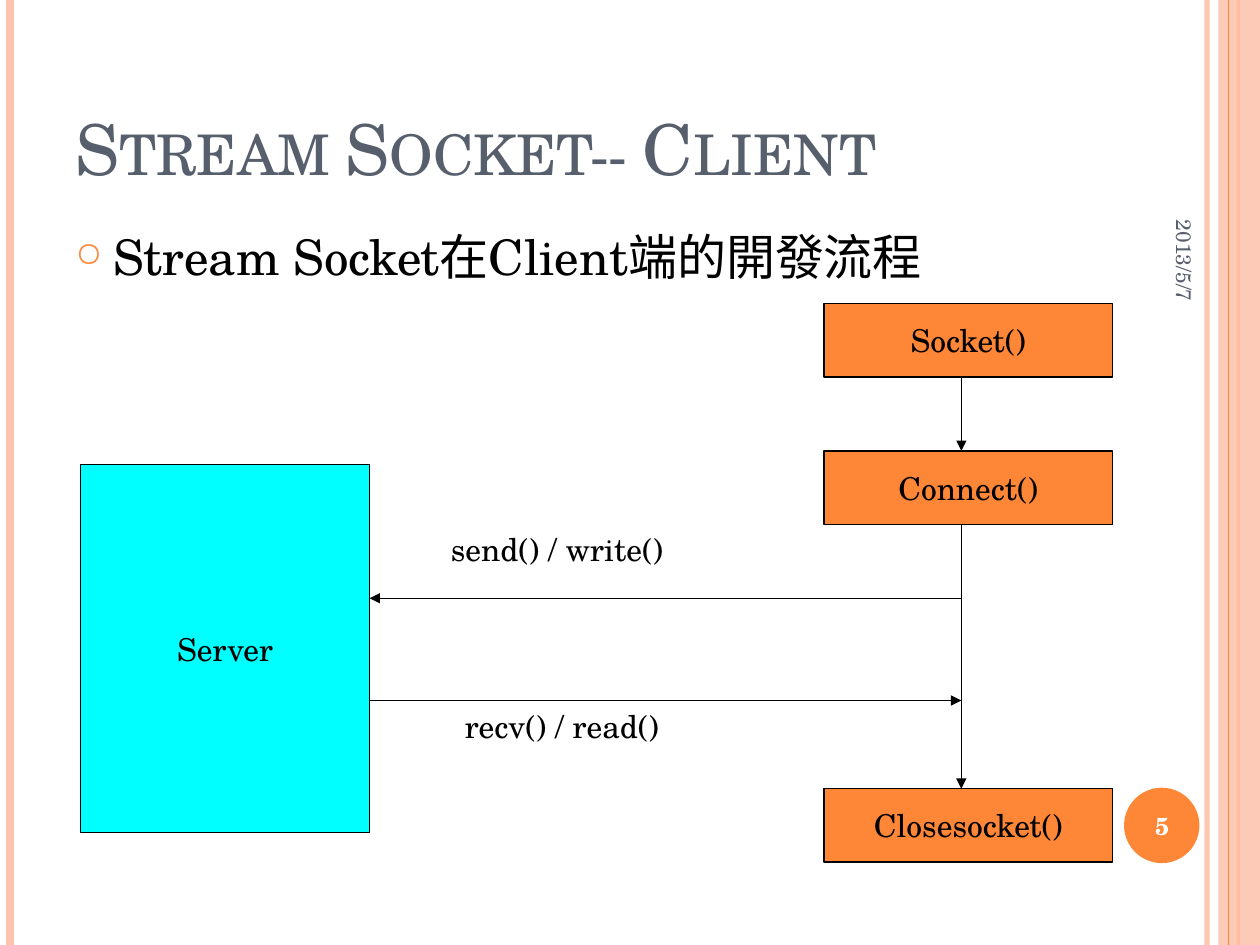
import pptx
import pptx.util
import pptx.dml.color
import pptx.enum.shapes
import pptx.enum.text
import pptx.oxml
from lxml import etree

Cm, Pt = pptx.util.Cm, pptx.util.Pt
rgb = pptx.dml.color.RGBColor.from_string
qn = pptx.oxml.ns.qn
SHAPE = pptx.enum.shapes.MSO_SHAPE
ALIGN = pptx.enum.text.PP_ALIGN
ANCHOR = pptx.enum.text.MSO_ANCHOR
FONT = "TeX Gyre Schola"
ORANGE, PINK, SLATE = "FE8637", "FEC3AE", "575F6D"
BLACK, WHITE, CYAN = "000000", "FFFFFF", "00FFFF"

prs = pptx.Presentation()
prs.slide_width, prs.slide_height = Cm(25.4), Cm(19.05)
slide = prs.slides.add_slide(prs.slide_layouts[6])


def add_line(x1, y1, x2, y2, color, width, arrow=False):
    s = slide.shapes.add_connector(
        pptx.enum.shapes.MSO_CONNECTOR.STRAIGHT, Cm(x1), Cm(y1), Cm(x2), Cm(y2))
    s.line.color.rgb = rgb(color)
    s.line.width = Pt(width)
    if arrow:
        etree.SubElement(s.line._get_or_add_ln(), qn("a:tailEnd"), type="triangle")
    etree.SubElement(s._element.spPr, qn("a:effectLst"))
    return s


def add_text(s, text, size, color, align, anchor):
    tf = s.text_frame
    tf.word_wrap = True
    tf.vertical_anchor = anchor
    p = tf.paragraphs[0]
    p.alignment = align
    r = p.add_run()
    r.text = text
    r.font.name = FONT
    r.font.size = Pt(size)
    r.font.color.rgb = rgb(color)
    return p, r


edge, _, stripe = [
    add_line(x, 0, x, 19.05, color, width)
    for x, color, width in [(24.33, PINK, 3), (0.2, PINK, 4.5), (24.97, ORANGE, 1.5)]
]

band = slide.shapes.add_shape(SHAPE.RECTANGLE, Cm(24.56), 0, Cm(0.84), Cm(19.05))
disc = slide.shapes.add_shape(SHAPE.OVAL, Cm(22.66), Cm(15.88), Cm(1.52), Cm(1.52))
for s, color in [(band, PINK), (disc, ORANGE)]:
    s.shadow.inherit = False
    s.fill.solid()
    s.fill.fore_color.rgb = rgb(color)
    s.line.fill.background()
for s, alpha in [(edge, "93000"), (band, "87000")]:
    clr = next(s._element.spPr.iter(qn("a:srgbClr")))
    etree.SubElement(clr, qn("a:alpha"), val=alpha)
add_line(24.77, 0, 24.77, 19.05, ORANGE, 0.75)

texts = [
    ("Stream Socket-- Client", 1.27, 0.76, 20.75, 3.18, 40, SLATE, ALIGN.LEFT, ANCHOR.BOTTOM),
    ("Stream Socket在Client端的開發流程", 1.27, 4.45, 20.75, 13.54, 28, BLACK, ALIGN.LEFT, ANCHOR.TOP),
    ("recv() / read()", 9.12, 14.12, 6.65, 1.5, 18, BLACK, ALIGN.LEFT, ANCHOR.TOP),
    ("send() / write()", 8.84, 10.57, 7.04, 1.5, 18, BLACK, ALIGN.LEFT, ANCHOR.TOP),
    ("2013/5/7", 21.08, 3, 5.59, 1.07, 12, SLATE, ALIGN.RIGHT, ANCHOR.MIDDLE),
    ("5", 22.58, 15.93, 1.7, 1.45, 14, WHITE, ALIGN.CENTER, ANCHOR.MIDDLE),
]
for text, x, y, w, h, size, color, align, anchor in texts:
    s = slide.shapes.add_textbox(Cm(x), Cm(y), Cm(w), Cm(h))
    p, r = add_text(s, text, size, color, align, anchor)
    if size == 40:
        r.font._element.set("cap", "small")
    elif size == 28:
        p.space_before = Pt(6)
        pPr = p._p.get_or_add_pPr()
        pPr.set("marL", str(Cm(0.76)))
        pPr.set("indent", str(-Cm(0.76)))
        clr = etree.SubElement(pPr, qn("a:buClr"))
        etree.SubElement(clr, qn("a:srgbClr"), val=ORANGE)
        etree.SubElement(pPr, qn("a:buSzPct"), val="70000")
        etree.SubElement(pPr, qn("a:buChar"), char="○")
    elif size == 12:
        s.rotation = 90
    elif size == 14:
        r.font.bold = True

boxes = [
    ("Socket()", 16.61, 6.12, 1.48, ORANGE),
    ("Connect()", 16.61, 9.09, 1.48, ORANGE),
    ("Closesocket()", 16.61, 15.9, 1.48, ORANGE),
    ("Server", 1.63, 9.37, 7.41, CYAN),
]
for text, x, y, h, color in boxes:
    s = slide.shapes.add_shape(SHAPE.RECTANGLE, Cm(x), Cm(y), Cm(5.82), Cm(h))
    s.shadow.inherit = False
    s.fill.solid()
    s.fill.fore_color.rgb = rgb(color)
    s.line.color.rgb = rgb(BLACK)
    s.line.width = Pt(0.75)
    add_text(s, text, 18, BLACK, ALIGN.CENTER, ANCHOR.MIDDLE)

trunk, server_edge = 19.38, 7.45
for x1, y1, x2, y2 in [
    (trunk, 7.6, trunk, 9.09),
    (trunk, 10.57, trunk, 15.9),
    (server_edge, 14.12, trunk, 14.12),
    (trunk, 12.06, server_edge, 12.06),
]:
    add_line(x1, y1, x2, y2, BLACK, 0.75, arrow=True)

prs.save("out.pptx")
